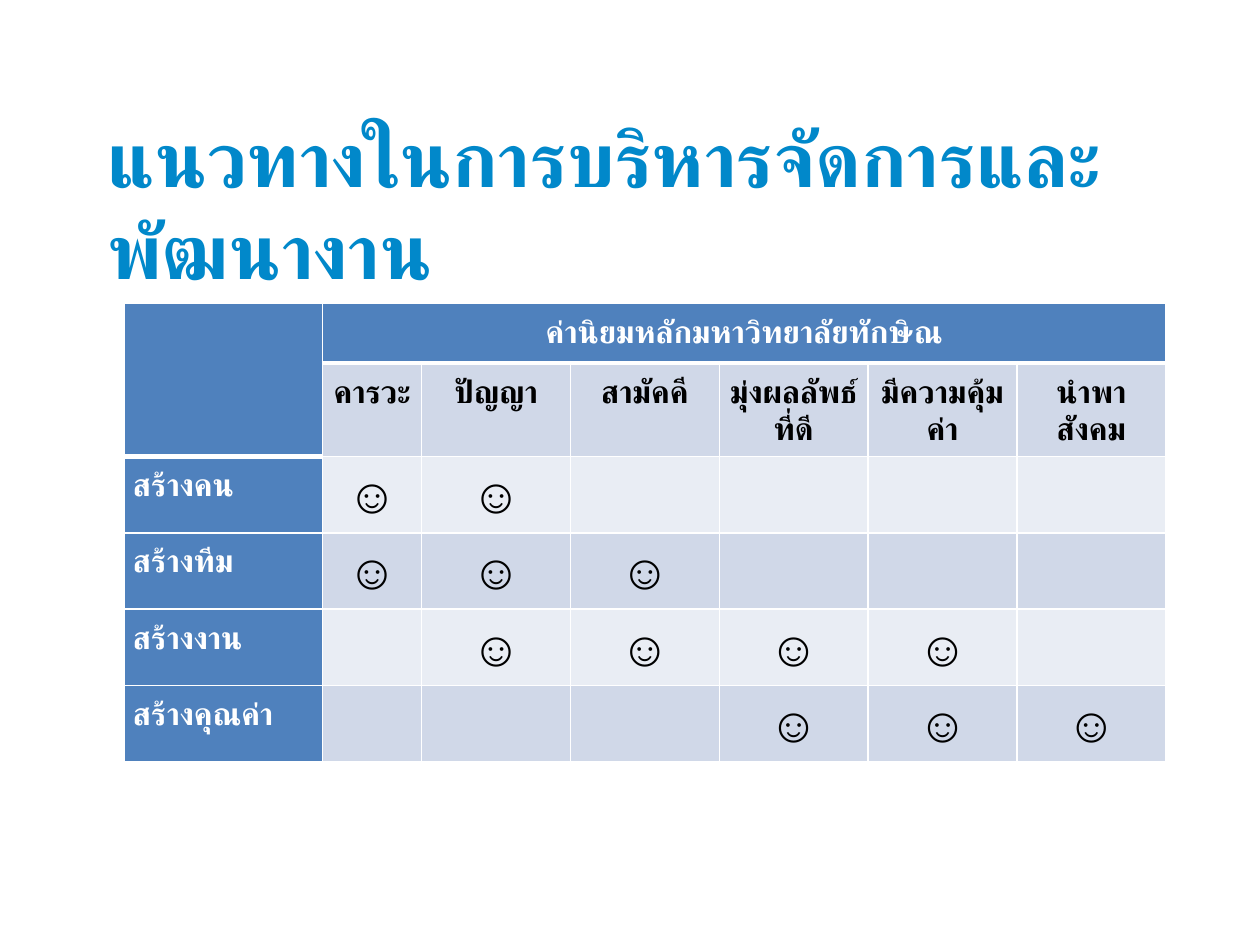
from dataclasses import dataclass

from lxml import etree
from pptx import Presentation
from pptx import util as u
from pptx.dml.color import RGBColor
from pptx.enum import text
from pptx.oxml.ns import qn


@dataclass(frozen=True)
class Theme:
    font: str = "Arial"
    title_color: str = "0188CA"
    header_fill: str = "4F81BD"
    light_band: str = "E9EDF4"
    dark_band: str = "D0D8E8"
    white: str = "FFFFFF"
    black: str = "000000"
    title_size: int = 44
    label_size: int = 18
    mark_size: int = 28
    line_spacing: float = 1.07
    inset: float = 0.18
    thin_border: int = 1
    thick_border: int = 3


class SlideBuilder:
    """Holds the theme and the current slide."""

    def __init__(self, presentation, theme):
        self.theme = theme
        self.slide = presentation.slides.add_slide(presentation.slide_layouts[5])

    def add_run(self, paragraph, words, size, color):
        run = paragraph.add_run()
        run.text = words
        run.font.size = u.Pt(size)
        run.font.bold = True
        run.font.name = self.theme.font
        run.font.color.rgb = RGBColor.from_string(color)
        # Thai letters take the complex-script font
        etree.SubElement(run.font._element, qn("a:cs"), typeface=self.theme.font)

    def add_title(self, words, left, top, width, height):
        title = self.slide.shapes.title
        title.left, title.top = u.Cm(left), u.Cm(top)
        title.width, title.height = u.Cm(width), u.Cm(height)
        frame = title.text_frame
        frame.word_wrap = True
        frame.auto_size = text.MSO_AUTO_SIZE.NONE
        frame.vertical_anchor = text.MSO_ANCHOR.MIDDLE
        paragraph = frame.paragraphs[0]
        paragraph.alignment = text.PP_ALIGN.LEFT
        self.add_run(paragraph, words, self.theme.title_size, self.theme.title_color)

    def add_table(self, left, top, widths, heights):
        table = self.slide.shapes.add_table(
            len(heights), len(widths), u.Cm(left), u.Cm(top),
            u.Cm(sum(widths)), u.Cm(sum(heights))).table
        for column, width in zip(table.columns, widths):
            column.width = u.Cm(width)
        for row, height in zip(table.rows, heights):
            row.height = u.Cm(height)
        return table

    def set_borders(self, cell, top, bottom):
        properties = cell._tc.get_or_add_tcPr()
        thin = self.theme.thin_border
        sides = {"a:lnL": thin, "a:lnR": thin, "a:lnT": top, "a:lnB": bottom}
        for tag, width in sides.items():
            line = etree.SubElement(properties, qn(tag), w=str(u.Pt(width)))
            fill = etree.SubElement(line, qn("a:solidFill"))
            etree.SubElement(fill, qn("a:srgbClr"), val=self.theme.white)

    def style_cell(self, cell, fill, top, bottom):
        # Borders come before the fill in the cell properties
        self.set_borders(cell, top, bottom)
        cell.fill.solid()
        cell.fill.fore_color.rgb = RGBColor.from_string(fill)
        inset = u.Cm(self.theme.inset)
        cell.margin_left = cell.margin_right = inset
        cell.margin_top = cell.margin_bottom = inset

    def write_cell(self, cell, words, size, color, alignment=text.PP_ALIGN.CENTER):
        paragraph = cell.text_frame.paragraphs[0]
        paragraph.alignment = alignment
        paragraph.line_spacing = self.theme.line_spacing
        self.add_run(paragraph, words, size, color)


def add_values_matrix(builder, heading, values, goals):
    """Goals in rows, values in columns, a smile where they meet."""
    theme = builder.theme
    widths = [4, 2] + [3] * (len(values) - 1)
    heights = [1.2, 1.73] + [1.53] * len(goals)
    table = builder.add_table(2.5, 6.12, widths, heights)

    # Fills and borders; a thick rule closes the header cells
    for row in range(len(heights)):
        band = theme.dark_band if row % 2 else theme.light_band
        for column in range(len(widths)):
            is_header = row == 0 or column == 0
            thick_row = 2 if column == 0 else 1
            top = theme.thick_border if row == thick_row else theme.thin_border
            bottom = theme.thick_border if row < thick_row else theme.thin_border
            builder.style_cell(table.cell(row, column),
                               theme.header_fill if is_header else band, top, bottom)

    # Header cells
    table.cell(0, 0).merge(table.cell(1, 0))
    table.cell(0, 1).merge(table.cell(0, len(values)))
    builder.write_cell(table.cell(0, 1), heading, theme.label_size, theme.white)
    for column, value in enumerate(values, 1):
        builder.write_cell(table.cell(1, column), value, theme.label_size, theme.black)

    # Goals with their marked columns
    for row, (goal, marked) in enumerate(goals.items(), 2):
        builder.write_cell(table.cell(row, 0), goal, theme.label_size,
                           theme.white, text.PP_ALIGN.LEFT)
        for column in marked:
            builder.write_cell(table.cell(row, column), "☺", theme.mark_size, theme.black)


def main():
    presentation = Presentation()
    presentation.slide_width, presentation.slide_height = u.Cm(25.4), u.Cm(19.05)
    builder = SlideBuilder(presentation, Theme())

    builder.add_title("แนวทางในการบริหารจัดการและพัฒนางาน", 1.91, 3.12, 22.61, 1.93)
    add_values_matrix(
        builder,
        "ค่านิยมหลักมหาวิทยาลัยทักษิณ",
        ["คารวะ", "ปัญญา", "สามัคคี", "มุ่งผลลัพธ์ที่ดี", "มีความคุ้มค่า", "นำพาสังคม"],
        {"สร้างคน": range(1, 3), "สร้างทีม": range(1, 4),
         "สร้างงาน": range(2, 6), "สร้างคุณค่า": range(4, 7)})
    presentation.save("out.pptx")


if __name__ == "__main__":
    main()
